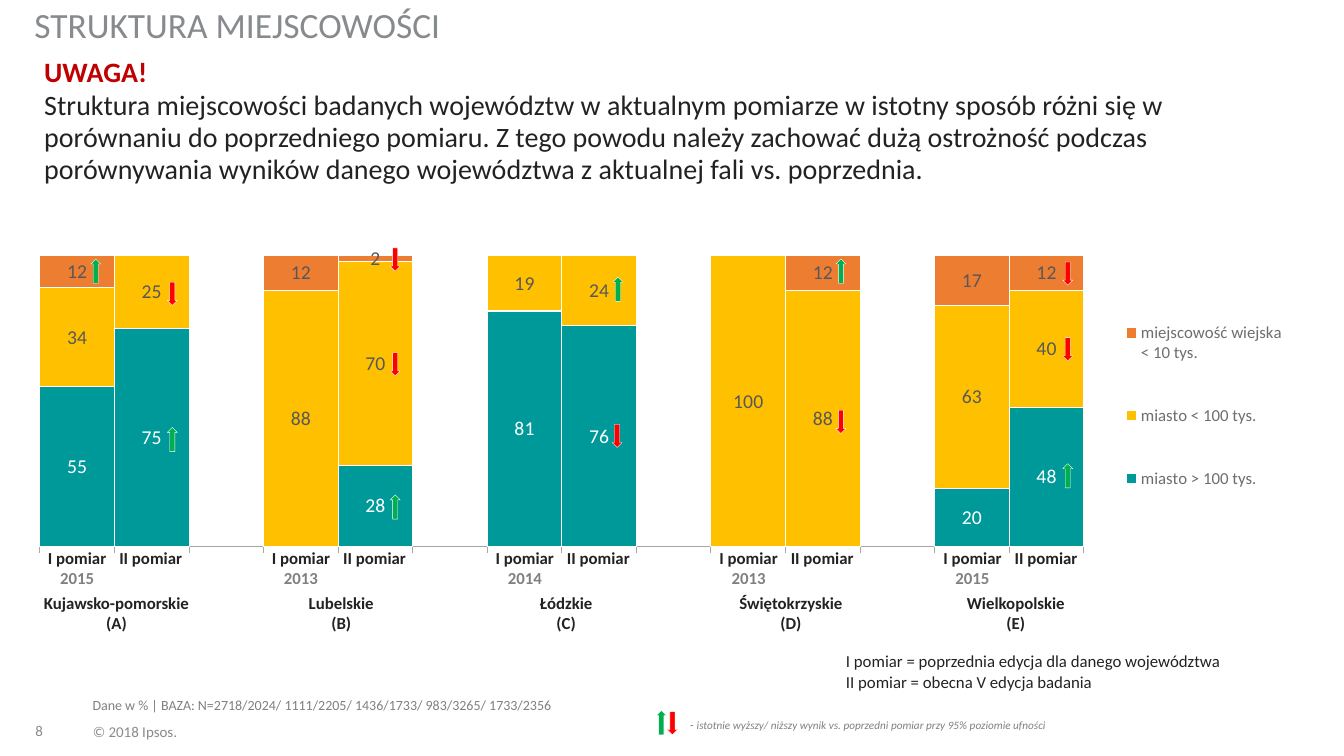
from lxml.etree import SubElement
from pptx import Presentation
from pptx.chart.data import CategoryChartData
from pptx.dml.color import RGBColor
from pptx.enum.chart import XL_CHART_TYPE as CT, XL_LABEL_POSITION as LP
from pptx.enum.chart import XL_LEGEND_POSITION as LEG, XL_TICK_LABEL_POSITION as TLP, XL_TICK_MARK as TM
from pptx.enum.shapes import MSO_SHAPE as SHAPE
from pptx.enum.text import MSO_ANCHOR as ANC, PP_ALIGN as AL
from pptx.oxml import parse_xml
from pptx.oxml.ns import nsdecls, qn
from pptx.util import Pt

PX = 9144
FONT = "Calibri"
NO_STYLE = "{2D5ABB26-0587-4C30-8999-92F81FD0307C}"
WHITE = RGBColor(0xFF, 0xFF, 0xFF)
INK = RGBColor(0x22, 0x22, 0x23)
GRAY = RGBColor(0x88, 0x8B, 0x8D)
MID = RGBColor(0x80, 0x80, 0x80)
SLATE = RGBColor(0x58, 0x58, 0x5B)
LEGEND_GRAY = RGBColor(0x6E, 0x6E, 0x71)
AXIS = RGBColor(0xA6, 0xA6, 0xA6)
DARK_RED = RGBColor(0xC0, 0x00, 0x00)
RED = RGBColor(0xFF, 0x00, 0x00)
GREEN = RGBColor(0x00, 0xB0, 0x50)
TEAL = RGBColor(0x00, 0x99, 0x99)
AMBER = RGBColor(0xFF, 0xC0, 0x00)
ORANGE = RGBColor(0xED, 0x7D, 0x31)

REGIONS = [("Kujawsko-pomorskie", "(A)", "2015"), ("Lubelskie", "(B)", "2013"),
           ("Łódzkie", "(C)", "2014"), ("Świętokrzyskie", "(D)", "2013"),
           ("Wielkopolskie", "(E)", "2015")]
SERIES = [
    ("miasto > 100 tys. ", TEAL, WHITE,
     [55, 75, None, 0, 28, None, 81, 76, None, 0, 0, None, 20, 48]),
    ("miasto < 100 tys.", AMBER, SLATE,
     [34, 25, None, 88, 70, None, 19, 24, None, 100, 88, None, 63, 40]),
    ("miejscowość wiejska < 10 tys.", ORANGE, SLATE,
     [12, 0, None, 12, 2, None, 0, 0, None, 0, 12, None, 17, 12]),
]
RISES = [(651, 705), (166, 424), (90, 257), (387, 491), (608, 275), (829, 257), (1054, 460)]
FALLS = [(662, 706), (166, 280), (387, 350), (387, 246), (607, 421), (829, 407),
         (1054, 335), (1054, 260)]
WARNING = ("Struktura miejscowości badanych województw w aktualnym pomiarze w istotny sposób "
           "różni się w porównaniu do poprzedniego pomiaru. Z tego powodu należy zachować dużą "
           "ostrożność podczas porównywania wyników danego województwa z aktualnej fali vs. "
           "poprzednia.")
SIGNIFICANCE = "istotnie wyższy/ niższy wynik vs. poprzedni pomiar przy 95% poziomie ufności"
BASE = "Dane w % | BAZA: N=2718/2024/ 1111/2205/ 1436/1733/ 983/3265/ 1733/2356"


def px(*values):
    return [v * PX for v in values]


def put_text(tf, paragraphs, size=12, color=INK, bold=False, italic=False, align=AL.LEFT, spacing=None):
    for i, runs in enumerate(paragraphs):
        p = tf.paragraphs[0] if i == 0 else tf.add_paragraph()
        p.alignment = align
        if spacing:
            p.line_spacing = spacing
        for text, own in [(runs, {})] if isinstance(runs, str) else runs:
            r = p.add_run()
            r.text = text
            f = r.font
            f.name = FONT
            f.size = Pt(own.get("size", size))
            f.bold = own.get("bold", bold)
            f.italic = italic
            f.color.rgb = own.get("color", color)


def add_text(s, box, paragraphs, anchor=ANC.TOP, wrap=True, inset=(0, 0), **fmt):
    tf = s.shapes.add_textbox(*px(*box)).text_frame
    tf.word_wrap = wrap
    tf.vertical_anchor = anchor
    tf.margin_left = tf.margin_right = inset[0] * PX
    tf.margin_top = tf.margin_bottom = inset[1] * PX
    put_text(tf, paragraphs, **fmt)


def add_labels(s, x, y, col, cells, fill=None, anchor=ANC.MIDDLE):
    frame = s.shapes.add_table(1, len(cells), *px(x, y, col * len(cells), 41))
    t = frame.table
    t.first_row = t.horz_banding = False
    t._tbl.tblPr.find(qn("a:tableStyleId")).text = NO_STYLE
    for i, paragraphs in enumerate(cells):
        t.columns[i].width = col * PX
        c = t.cell(0, i)
        c.margin_left = c.margin_right = c.margin_top = c.margin_bottom = 0
        c.vertical_anchor = anchor
        if fill is None:
            c.fill.background()
        else:
            c.fill.solid()
            c.fill.fore_color.rgb = fill
        put_text(c.text_frame, paragraphs, bold=True, align=AL.CENTER, spacing=Pt(14))


def add_arrow(s, x, y, preset, height, color):
    sp = s.shapes.add_shape(preset, *px(x, y, 10, height))
    sp.shadow.inherit = False
    sp.fill.solid()
    sp.fill.fore_color.rgb = color
    sp.line.color.rgb = WHITE
    sp.line.width = Pt(0.25)


def set_layout(element, before, x, y, w, h, inner=False):
    old = element.find(qn("c:layout"))
    if old is not None:
        element.remove(old)
    layout = parse_xml(f'<c:layout {nsdecls("c")}><c:manualLayout/></c:layout>')
    manual = layout[0]
    entries = [("layoutTarget", "inner")] if inner else []
    entries += [("xMode", "edge"), ("yMode", "edge"), ("x", x), ("y", y), ("w", w), ("h", h)]
    for tag, val in entries:
        SubElement(manual, qn("c:" + tag)).set("val", str(val))
    element.find(qn(before)).addprevious(layout)


def style_font(font, size, color):
    font.name = FONT
    font.size = Pt(size)
    font.color.rgb = color


def add_structure_chart(s):
    data = CategoryChartData(number_format="0")
    data.categories = [str(n + 1) for n in range(len(SERIES[0][3]))]
    for name, _, _, values in SERIES:
        data.add_series(name, values)
    ch = s.shapes.add_chart(CT.COLUMN_STACKED, *px(18, 235, 1272, 390), data).chart
    style_font(ch.font, 10, INK)
    ch.has_title = False
    ch.has_legend = True
    ch.legend.position = LEG.RIGHT
    ch.legend.include_in_layout = False
    style_font(ch.legend.font, 12, LEGEND_GRAY)
    ca, va = ch.category_axis, ch.value_axis
    ca.tick_label_position = TLP.NONE
    ca.major_tick_mark = TM.OUTSIDE
    ca.format.line.color.rgb = AXIS
    ca.format.line.width = Pt(0.75)
    style_font(ca.tick_labels.font, 12, LEGEND_GRAY)
    va.minimum_scale, va.maximum_scale = 0, 100
    va.has_major_gridlines = False
    va.visible = False
    plot = ch.plots[0]
    plot.vary_by_categories = False
    plot.gap_width, plot.overlap = 0, 100
    for ser, (_, color, label_color, _) in zip(plot.series, SERIES):
        ser.format.fill.solid()
        ser.format.fill.fore_color.rgb = color
        ser.format.line.color.rgb = WHITE
        ser.format.line.width = Pt(0.75)
        labels = ser.data_labels
        labels.show_value = True
        labels.position = LP.CENTER
        labels.number_format = "0;;"
        labels.number_format_is_linked = False
        style_font(labels.font, 14, label_color)
    area = ch._chartSpace.chart.plotArea
    set_layout(area, "c:barChart", 0.017, 0.048, 0.814, 0.741, inner=True)
    set_layout(ch.legend._element, "c:overlay", 0.86, 0.11, 0.13, 0.64)


def main():
    prs = Presentation()
    prs.slide_width, prs.slide_height = px(1333, 750)
    s = prs.slides.add_slide(prs.slide_layouts[6])
    footer = dict(anchor=ANC.BOTTOM, wrap=False, size=10.7, color=GRAY, spacing=0.85)
    add_text(s, (35, 699, 45, 35), ["8"], **footer)
    add_text(s, (92, 710, 101, 25), ["© 2018 Ipsos."], **footer)
    add_structure_chart(s)
    add_text(s, (34, 13, 978, 32), ["STRUKTURA MIEJSCOWOŚCI"], anchor=ANC.BOTTOM, size=25.3, color=GRAY)
    add_labels(s, 4, 589, 223, [[name, letter] for name, letter, _ in REGIONS], fill=WHITE)
    for i, (_, _, year) in enumerate(REGIONS):
        first = ["I pomiar", [(year, {"color": MID})]]
        add_labels(s, 40 + 222 * i, 545, 73, [first, ["II pomiar"]], anchor=ANC.TOP)
    add_text(s, (34, 51, 1262, 133), [[("UWAGA!", {"color": DARK_RED, "bold": True})], WARNING],
             inset=(10, 5), size=20, spacing=Pt(23))
    add_text(s, (640, 711, 398, 15), [[("- ", {"size": 9}), (SIGNIFICANCE, {})]],
             size=8, color=MID, italic=True, align=AL.RIGHT)
    add_text(s, (839, 646, 451, 40), ["I pomiar = poprzednia edycja dla danego województwa",
                                      "II pomiar = obecna V edycja badania"], anchor=ANC.MIDDLE)
    add_text(s, (82, 686, 686, 27), [BASE], inset=(10, 5), size=10, color=MID)
    for x, y in RISES:
        add_arrow(s, x, y, SHAPE.UP_ARROW, 24, GREEN)
    for x, y in FALLS:
        add_arrow(s, x, y, SHAPE.DOWN_ARROW, 23, RED)
    prs.save("out.pptx")


if __name__ == "__main__":
    main()
